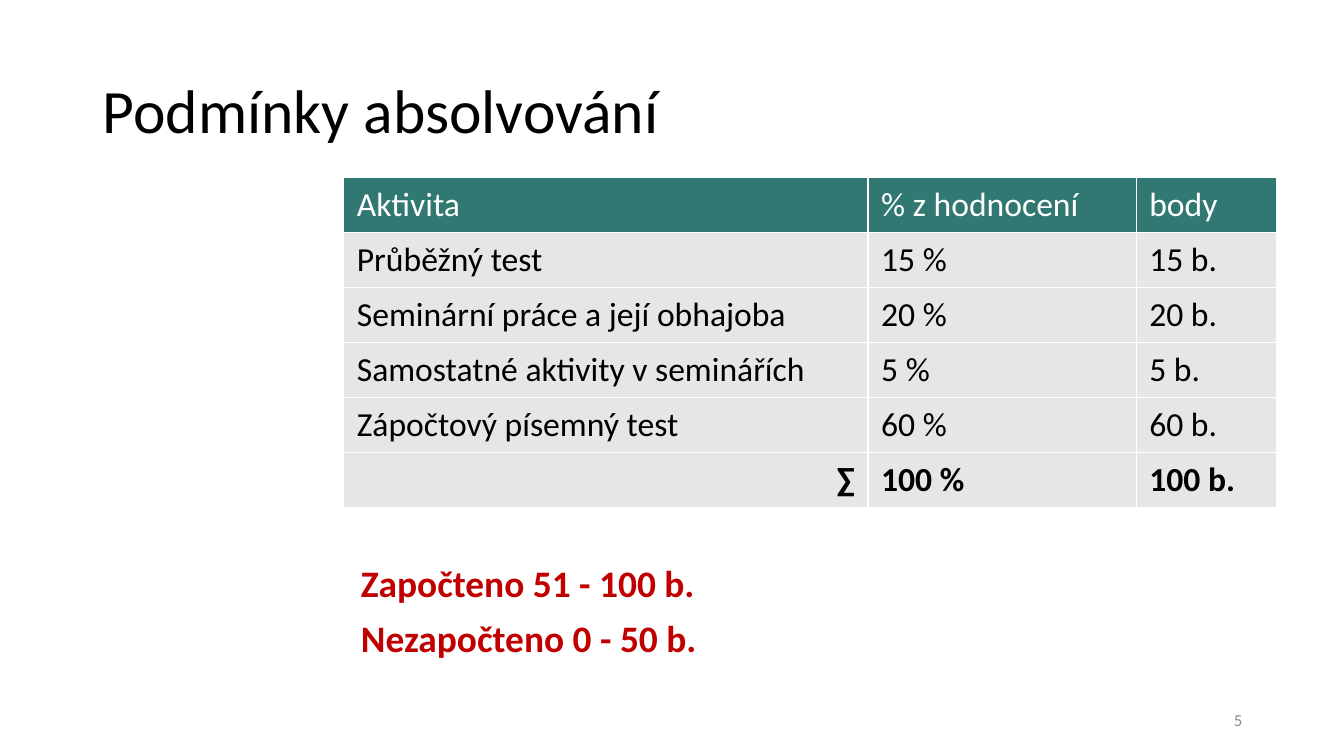
from dataclasses import dataclass

from lxml import etree
from pptx import Presentation
from pptx.dml.color import RGBColor
from pptx.enum import text
from pptx.oxml import ns
from pptx.util import Inches, Pt


@dataclass(frozen=True)
class Theme:
    font: str = "Calibri"
    ink: str = "000000"
    paper: str = "FFFFFF"
    header: str = "307871"
    row: str = "E7E6E6"
    verdict: str = "C00000"
    muted: str = "8C8C8C"
    title_size: float = 44
    table_size: float = 24
    verdict_size: float = 26.7
    number_size: float = 12


class SlideBuilder:
    def __init__(self, slide, theme):
        self.slide = slide
        self.theme = theme

    def style(self, paragraph, size, color, bold=False, align=text.PP_ALIGN.LEFT):
        paragraph.alignment = align
        font = paragraph.font
        font.name = self.theme.font
        font.size = Pt(size)
        font.bold = bold
        font.color.rgb = RGBColor.from_string(color)

    def title(self, wording, left, top, width, height):
        title = self.slide.shapes.title
        title.left, title.top = Inches(left), Inches(top)
        title.width, title.height = Inches(width), Inches(height)
        frame = title.text_frame
        frame.text = wording
        frame.vertical_anchor = text.MSO_ANCHOR.MIDDLE
        frame.paragraphs[0].line_spacing = 0.9
        self.style(frame.paragraphs[0], self.theme.title_size, self.theme.ink)

    def text_box(self, lines, left, top, width, height, size, color, bold=False,
                 align=text.PP_ALIGN.LEFT, anchor=text.MSO_ANCHOR.TOP):
        box = self.slide.shapes.add_textbox(
            Inches(left), Inches(top), Inches(width), Inches(height))
        frame = box.text_frame
        frame.word_wrap = True
        frame.vertical_anchor = anchor
        frame.margin_left = frame.margin_top = frame.margin_bottom = 0
        frame.text = "\n".join(lines)
        for index, paragraph in enumerate(frame.paragraphs):
            paragraph.line_spacing = 0.9
            if index:
                paragraph.space_before = Pt(10)
            self.style(paragraph, size, color, bold, align)

    def cell_borders(self, cell):
        properties = cell._tc.get_or_add_tcPr()
        for side in ("lnL", "lnR", "lnT", "lnB"):
            line = etree.SubElement(properties, ns.qn(f"a:{side}"), w=str(Pt(1)))
            fill = etree.SubElement(line, ns.qn("a:solidFill"))
            etree.SubElement(fill, ns.qn("a:srgbClr"), val=self.theme.paper)

    def table(self, rows, left, top, widths, row_height):
        """Draw a table with a header row first and a bold totals row last."""
        table = self.slide.shapes.add_table(
            len(rows), len(widths), Inches(left), Inches(top),
            Inches(sum(widths)), Inches(row_height * len(rows))).table
        table.first_row = table.horz_banding = False
        for column, width in zip(table.columns, widths):
            column.width = Inches(width)
        for r, row in enumerate(rows):
            table.rows[r].height = Inches(row_height)
            header, total = r == 0, r == len(rows) - 1
            for c, wording in enumerate(row):
                cell = table.cell(r, c)
                cell.text = wording
                cell.margin_left = cell.margin_right = Inches(0.13)
                cell.margin_top = cell.margin_bottom = Inches(0.07)
                self.cell_borders(cell)
                cell.fill.solid()
                cell.fill.fore_color.rgb = RGBColor.from_string(
                    self.theme.header if header else self.theme.row)
                self.style(
                    cell.text_frame.paragraphs[0], self.theme.table_size,
                    self.theme.paper if header else self.theme.ink, total,
                    text.PP_ALIGN.RIGHT if total and c == 0 else text.PP_ALIGN.LEFT)


def main():
    deck = Presentation()
    deck.slide_width, deck.slide_height = Inches(13.33), Inches(7.5)
    theme = Theme()
    builder = SlideBuilder(deck.slides.add_slide(deck.slide_layouts[5]), theme)

    builder.title("Podmínky absolvování", 0.92, 0.4, 11.5, 1.45)
    grading = [
        ("Aktivita", "% z hodnocení", "body"),
        ("Průběžný test", "15 %", "15 b."),
        ("Seminární práce a její obhajoba", "20 %", "20 b."),
        ("Samostatné aktivity v seminářích", "5 %", "5 b."),
        ("Zápočtový písemný test", "60 %", "60 b."),
        ("∑", "100 %", "100 b."),
    ]
    builder.table(grading, 3.41, 1.76, (5.2, 2.66, 1.39), 0.54)
    builder.text_box(["Započteno 51 - 100 b.", "Nezapočteno 0 - 50 b."],
                     3.58, 5.61, 9, 1.1, theme.verdict_size, theme.verdict, bold=True)
    builder.text_box(["5"], 9.42, 6.95, 3, 0.4, theme.number_size, theme.muted,
                     align=text.PP_ALIGN.RIGHT, anchor=text.MSO_ANCHOR.MIDDLE)
    deck.save("out.pptx")


if __name__ == "__main__":
    main()
